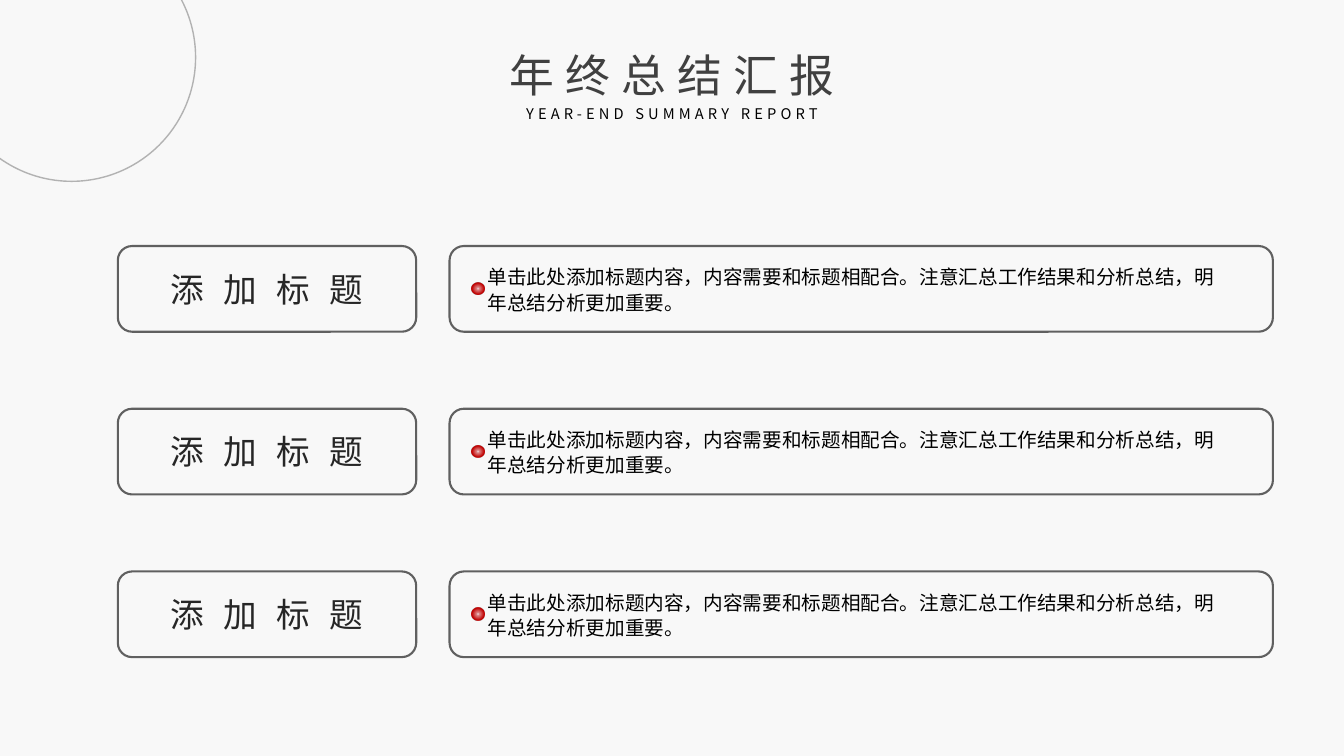
"""Build the year-end summary slide with three titled rows."""
from dataclasses import dataclass

from lxml import etree
from pptx import Presentation
from pptx.dml.color import RGBColor
from pptx.enum.shapes import MSO_SHAPE
from pptx.enum.text import MSO_AUTO_SIZE, PP_ALIGN
from pptx.oxml import parse_xml
from pptx.oxml.ns import qn
from pptx.util import Cm, Pt

ROUNDED = MSO_SHAPE.ROUNDED_RECTANGLE
OVAL = MSO_SHAPE.OVAL
FIT_SHAPE = MSO_AUTO_SIZE.SHAPE_TO_FIT_TEXT
LEFT, CENTER = PP_ALIGN.LEFT, PP_ALIGN.CENTER

FONT = "Noto Sans CJK SC"
BACKGROUND, OUTLINE = "F8F8F8", "606060"
ROW_COUNT, FIRST_ROW_TOP, ROW_PITCH, ROW_HEIGHT = 3, 6.2, 4.1, 2.16
HEADING = "添加标题"
NOTE = ("单击此处添加标题内容，内容需要和标题相配合。"
        "注意汇总工作结果和分析总结，明年总结分析更加重要。")
DOT_GRADIENT = """
<a:gradFill xmlns:a="http://schemas.openxmlformats.org/drawingml/2006/main">
  <a:gsLst>
    <a:gs pos="0"><a:srgbClr val="F6F8FC"/></a:gs>
    <a:gs pos="23000"><a:srgbClr val="C00000"><a:alpha val="55000"/></a:srgbClr></a:gs>
    <a:gs pos="63000"><a:srgbClr val="C00000"/></a:gs>
    <a:gs pos="100000"><a:srgbClr val="C00000"/></a:gs>
  </a:gsLst>
  <a:path path="circle"><a:fillToRect l="50000" t="50000" r="50000" b="50000"/></a:path>
</a:gradFill>"""


@dataclass(frozen=True)
class Box:
    """Position and size in centimetres."""
    left: float
    top: float
    width: float
    height: float

    def lengths(self) -> tuple[Cm, ...]:
        """Return the four values as lengths."""
        return Cm(self.left), Cm(self.top), Cm(self.width), Cm(self.height)


def color(value: str) -> RGBColor:
    """Turn a hex string into a colour."""
    return RGBColor.from_string(value)


def add_text(shapes, box: Box, text: str, *, size: float, ink: str = "000000",
             spacing: float = 0, align: PP_ALIGN = CENTER, wrap: bool = True,
             line_spacing: float | None = None) -> None:
    """Add a text box holding one formatted paragraph."""
    frame = shapes.add_textbox(*box.lengths()).text_frame
    frame.word_wrap = wrap
    frame.auto_size = FIT_SHAPE
    paragraph = frame.paragraphs[0]
    paragraph.alignment = align
    if line_spacing is not None:
        paragraph.line_spacing = Pt(line_spacing)
    run = paragraph.add_run()
    run.text = text
    run.font.size = Pt(size)
    run.font.color.rgb = color(ink)
    run.font.name = FONT
    properties = run.font._element
    etree.SubElement(properties, qn("a:ea"), typeface=FONT)
    if spacing:
        properties.set("spc", str(round(spacing * 100)))


def add_outline(shapes, kind: MSO_SHAPE, box: Box, width: float,
                opacity: int = 100) -> None:
    """Add an unfilled shape with a grey outline."""
    shape = shapes.add_shape(kind, *box.lengths())
    shape.shadow.inherit = False
    shape.fill.background()
    shape.line.color.rgb = color(OUTLINE)
    shape.line.width = Pt(width)
    if opacity < 100:
        line_color = shape._element.spPr.find(".//" + qn("a:srgbClr"))
        etree.SubElement(line_color, qn("a:alpha"), val=str(opacity * 1000))


def add_dot(shapes, box: Box) -> None:
    """Add a red dot with a radial gradient."""
    dot = shapes.add_shape(OVAL, *box.lengths())
    dot.shadow.inherit = False
    dot.line.fill.background()
    geometry = dot._element.spPr.find(qn("a:prstGeom"))
    geometry.addnext(parse_xml(DOT_GRADIENT))


def add_heading(slide, top: float) -> None:
    """Add the framed heading of a row."""
    shapes = slide.shapes.add_group_shape().shapes
    add_outline(shapes, ROUNDED, Box(2.97, top, 7.52, ROW_HEIGHT), 1.5)
    add_text(shapes, Box(3.66, top + 0.44, 6.12, 1.27), HEADING,
             size=24, ink="262626", spacing=14)


def add_note(slide, top: float) -> None:
    """Add the framed note of a row with its dot."""
    shapes = slide.shapes.add_group_shape().shapes
    add_outline(shapes, ROUNDED, Box(11.33, top, 20.75, ROW_HEIGHT), 1.5)
    add_text(shapes, Box(12.04, top + 0.32, 19.3, 1.55), NOTE,
             size=14, align=LEFT, line_spacing=18)
    add_dot(shapes, Box(11.89, top + 0.92, 0.31, 0.31))


def main() -> None:
    """Create and save the slide."""
    presentation = Presentation()
    presentation.slide_width = Cm(33.87)
    presentation.slide_height = Cm(19.05)
    slide = presentation.slides.add_slide(presentation.slide_layouts[6])
    slide.background.fill.solid()
    slide.background.fill.fore_color.rgb = color(BACKGROUND)

    add_text(slide.shapes, Box(12.45, 1.07, 8.99, 1.63), "年终总结汇报",
             size=32, ink="404040", spacing=8)
    add_text(slide.shapes, Box(12.7, 2.51, 8.48, 0.71), "YEAR-END SUMMARY REPORT",
             size=10.5, spacing=3, wrap=False)
    row_tops = [FIRST_ROW_TOP + row * ROW_PITCH for row in range(ROW_COUNT)]
    for add_part in (add_heading, add_note):
        for top in row_tops:
            add_part(slide, top)
    add_outline(slide.shapes, OVAL, Box(-1.32, -1.68, 6.25, 6.25), 1, opacity=46)

    presentation.save("out.pptx")


if __name__ == "__main__":
    main()
